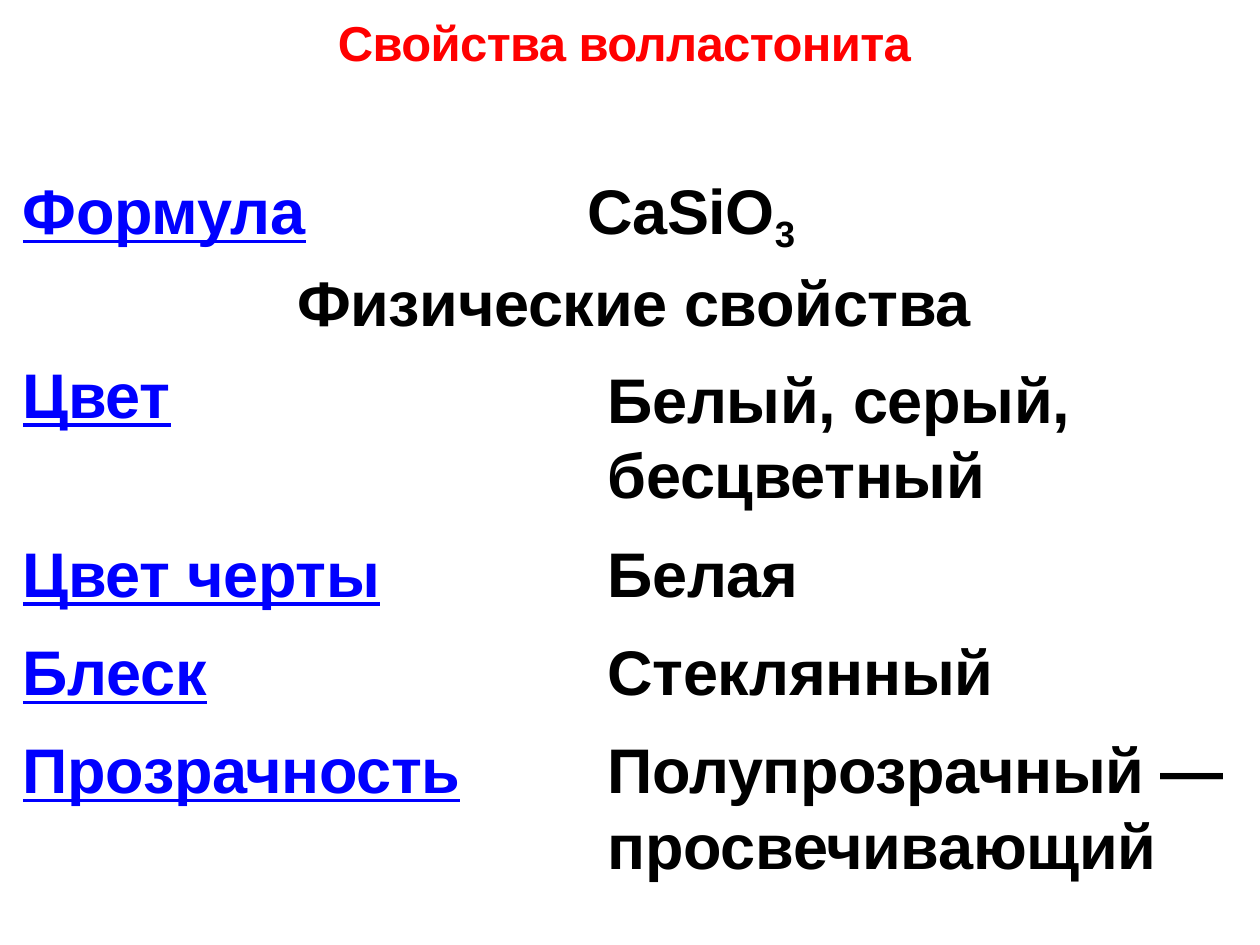
from dataclasses import dataclass

from pptx import Presentation
from pptx import util as u
from pptx.dml import color as c
from pptx.enum import text as t

RED = c.RGBColor(255, 0, 0)
BLUE = c.RGBColor(0, 0, 255)
BLACK = c.RGBColor(0, 0, 0)
WHITE = c.RGBColor(255, 255, 255)

COLS = [8.97, 1.78, 14.38]
ROWS = [1.85, 1.85, 3.61, 1.98, 1.98, 3.35]


@dataclass
class Entry:
    row: int
    col: int
    last: int
    lines: list[str]
    indent: float
    label: bool = False
    lead: float | None = None
    sub: str = ""


def label(row: int, word: str) -> Entry:
    return Entry(row, 0, 0 if row == 0 else 1, [word], 0.41, label=True)


def value(row: int, *lines: str, lead: float | None = None) -> Entry:
    return Entry(row, 2, 2, list(lines), 1.45, lead=lead)


ENTRIES = [
    label(0, "Формула"),
    Entry(0, 1, 2, ["CaSiO"], 2.82, sub="3"),
    Entry(1, 0, 2, ["Физические свойства"], 5.94),
    label(2, "Цвет"),
    value(2, "Белый, серый, бесцветный", lead=1.07),
    label(3, "Цвет черты"),
    value(3, "Белая"),
    label(4, "Блеск"),
    value(4, "Стеклянный"),
    label(5, "Прозрачность"),
    value(5, "Полупрозрачный —", "просвечивающий"),
]


def write(para, words: str, *, size: float = 36, color=BLACK, line: bool = False,
          indent: float = 0, track: int = -20, base: int = 0) -> None:
    props = para._p.get_or_add_pPr()
    props.set("marL", str(u.Cm(indent)))
    props.set("indent", "0")
    run = para.add_run()
    run.text = words
    font = run.font
    font.name, font.size, font.bold = "Arial", u.Pt(size), True
    font.underline = line
    font.color.rgb = color
    mark = run._r.get_or_add_rPr()
    mark.set("spc", str(track))
    if base:
        mark.set("baseline", str(base))


def trim(box) -> None:
    box.margin_left = box.margin_right = box.margin_top = box.margin_bottom = 0
    box.word_wrap = True


def draw_title(slide) -> None:
    frame = slide.shapes.add_textbox(u.Cm(0.23), u.Cm(0.25), u.Cm(24.94), u.Cm(1.19)).text_frame
    trim(frame)
    frame.vertical_anchor = t.MSO_ANCHOR.MIDDLE
    write(frame.paragraphs[0], "Свойства волластонита", size=28, color=RED,
          indent=6.58, track=-35)


def draw_entry(table, entry: Entry) -> None:
    cell = table.cell(entry.row, entry.col)
    if entry.last > entry.col:
        cell.merge(table.cell(entry.row, entry.last))
    frame = cell.text_frame
    color = BLUE if entry.label else BLACK
    for i, words in enumerate(entry.lines):
        para = frame.add_paragraph() if i else frame.paragraphs[0]
        if i:
            para.space_before = u.Pt(3)
        if entry.lead:
            para.line_spacing = entry.lead
        write(para, words, color=color, line=entry.label, indent=entry.indent)
        if entry.sub:
            write(para, entry.sub, indent=entry.indent, track=0, base=-21000)


def draw_table(slide) -> None:
    frame = slide.shapes.add_table(len(ROWS), len(COLS), u.Cm(0.05), u.Cm(3.58),
                                   u.Cm(sum(COLS)), u.Cm(sum(ROWS)))
    table = frame.table
    table.first_row = table.horz_banding = False
    for col, width in zip(table.columns, COLS):
        col.width = u.Cm(width)
    for row, height in zip(table.rows, ROWS):
        row.height = u.Cm(height)
    for cell in table.iter_cells():
        trim(cell)
        cell.fill.solid()
        cell.fill.fore_color.rgb = WHITE
    for entry in ENTRIES:
        draw_entry(table, entry)


def main() -> None:
    deck = Presentation()
    deck.slide_width, deck.slide_height = u.Cm(25.4), u.Cm(19.05)
    slide = deck.slides.add_slide(deck.slide_layouts[6])
    draw_title(slide)
    draw_table(slide)
    deck.save("out.pptx")


if __name__ == "__main__":
    main()
